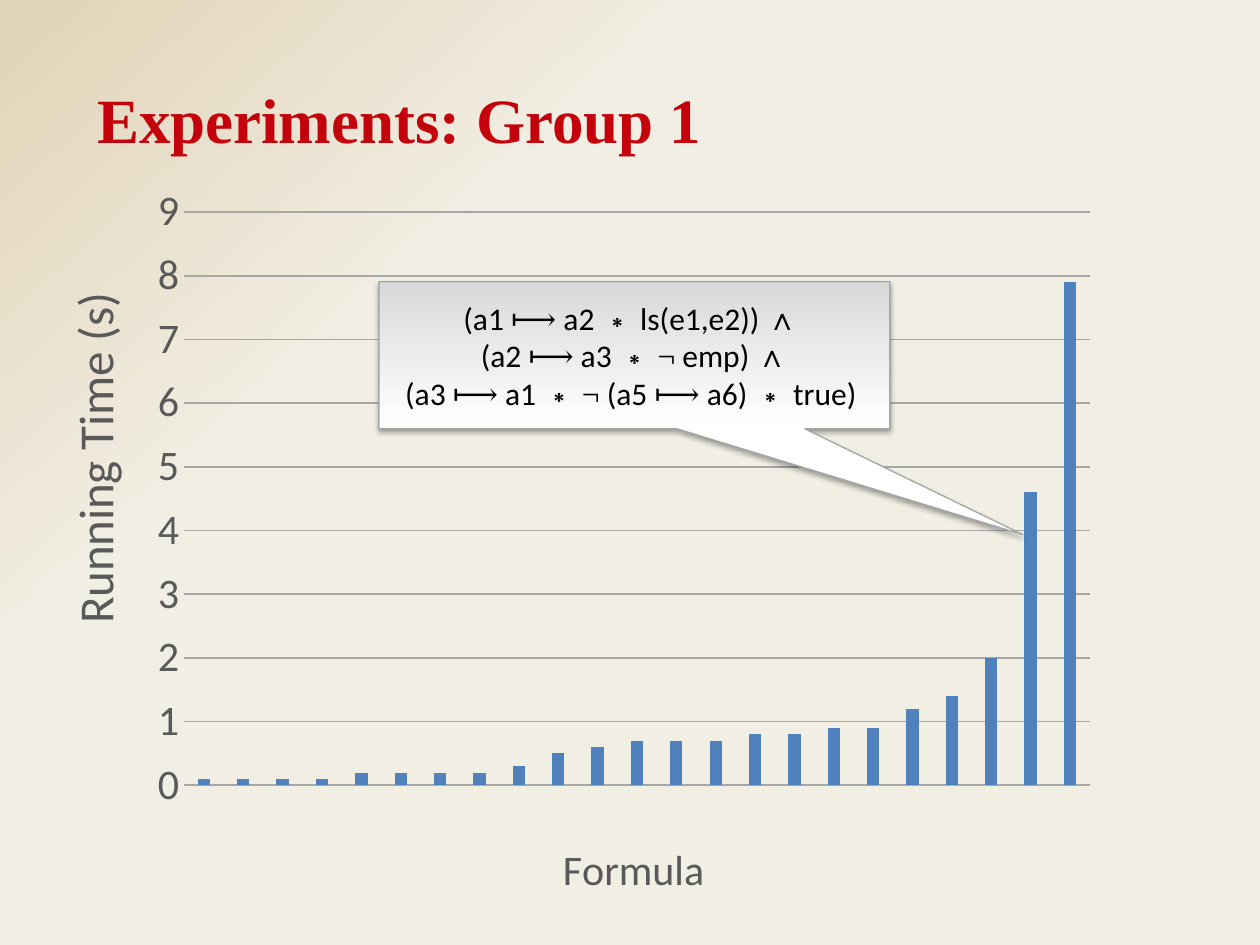
from itertools import groupby

from lxml import etree
from pptx import Presentation
from pptx.chart.data import CategoryChartData
from pptx.dml.color import RGBColor
from pptx.enum.chart import XL_CHART_TYPE, XL_TICK_MARK
from pptx.enum.shapes import MSO_SHAPE
from pptx.enum.text import MSO_ANCHOR, MSO_AUTO_SIZE, PP_ALIGN
from pptx.oxml.ns import qn
from pptx.util import Pt

COLUMNS = XL_CHART_TYPE.COLUMN_CLUSTERED
NO_TICKS = XL_TICK_MARK.NONE
CALLOUT = MSO_SHAPE.RECTANGULAR_CALLOUT
TOP, MIDDLE = MSO_ANCHOR.TOP, MSO_ANCHOR.MIDDLE
LEFT, CENTER = PP_ALIGN.LEFT, PP_ALIGN.CENTER
NO_FIT = MSO_AUTO_SIZE.NONE

TAN = RGBColor(0xE1, 0xD3, 0xB6)
CREAM = RGBColor(0xF1, 0xEE, 0xE4)
RED = RGBColor(0xC3, 0x02, 0x0B)
BLUE = RGBColor(0x4F, 0x81, 0xBD)
BLACK = RGBColor(0, 0, 0)
WHITE = RGBColor(0xFF, 0xFF, 0xFF)
DARK_GRAY = RGBColor(0x59, 0x59, 0x59)
MID_GRAY = RGBColor(0xA6, 0xA6, 0xA6)
LIGHT_GRAY = RGBColor(0xD9, 0xD9, 0xD9)

RUNNING_TIMES = [0.1, 0.1, 0.1, 0.1, 0.2, 0.2, 0.2, 0.2, 0.3, 0.5, 0.6, 0.7,
                 0.7, 0.7, 0.8, 0.8, 0.9, 0.9, 1.2, 1.4, 2, 4.6, 7.9]
FORMULA_LINES = ["(a1 ⟼ a2 ∗ ls(e1,e2)) ∧ ",
                 "(a2 ⟼ a3 ∗ ¬ emp) ∧",
                 "(a3 ⟼ a1 ∗ ¬ (a5 ⟼ a6) ∗ true) "]
SYMBOLS = "⟼∗∧¬"


def style_font(font, name, size, color, bold=False):
    font.name, font.size, font.bold = name, Pt(size), bold
    font.color.rgb = color


def fill_gradient(fill, angle, *stops):
    fill.gradient()
    fill.gradient_angle = angle
    for stop, (position, color) in zip(fill.gradient_stops, stops):
        stop.position, stop.color.rgb = position, color


def set_layout(parent, index, **fractions):
    """Place a chart part by fractions of the chart's size."""
    for old in parent.findall(qn("c:layout")):
        parent.remove(old)
    layout = etree.Element(qn("c:layout"))
    parent.insert(index, layout)
    manual = etree.SubElement(layout, qn("c:manualLayout"))
    if "w" in fractions:
        etree.SubElement(manual, qn("c:layoutTarget"), val="inner")
    for mode in ("xMode", "yMode"):
        etree.SubElement(manual, qn("c:" + mode), val="edge")
    for key, value in fractions.items():
        etree.SubElement(manual, qn("c:" + key), val=str(value))


class SlideBuilder:
    text_font = "Calibri"
    serif_font = "Times New Roman"

    def __init__(self, page):
        self.page = page

    def background(self):
        fill_gradient(self.page.background.fill, 313, (0, TAN), (0.32, CREAM))

    def title(self, text, left, top, width, height):
        box = self.page.shapes.title
        box.left, box.top, box.width, box.height = map(Pt, (left, top, width, height))
        frame = box.text_frame
        frame.auto_size, frame.vertical_anchor = NO_FIT, TOP
        frame.margin_left = frame.margin_right = frame.margin_bottom = 0
        frame.margin_top = Pt(3.6)
        frame.text = text
        para = frame.paragraphs[0]
        para.alignment = LEFT
        style_font(para.font, self.serif_font, 36, RED, bold=True)

    def axis_title(self, axis, text, size, x, y, rotation=0):
        title = axis.axis_title
        title.text_frame.text = text
        style_font(title.text_frame.paragraphs[0].font, self.text_font, size, DARK_GRAY)
        body = title._element.find(".//" + qn("a:bodyPr"))
        body.set("rot", str(rotation * 60000))
        body.set("vert", "horz")
        set_layout(title._element, 1, x=x, y=y)

    def column_chart(self, values, left, top, width, height):
        data = CategoryChartData()
        data.categories = [str(number) for number in range(1, len(values) + 1)]
        data.add_series("Series 1", values)
        chart = self.page.shapes.add_chart(
            COLUMNS, *map(Pt, (left, top, width, height)), data).chart
        chart.has_legend = chart.has_title = False
        style_font(chart.font, self.text_font, 10, BLACK)

        # Columns
        plot = chart.plots[0]
        plot.gap_width, plot.overlap, plot.vary_by_categories = 219, -27, False
        series_fill = plot.series[0].format.fill
        series_fill.solid()
        series_fill.fore_color.rgb = BLUE

        # Axes
        chart.category_axis.visible = False
        axis = chart.value_axis
        axis.minimum_scale, axis.maximum_scale, axis.major_unit = 0, 9, 1
        axis.major_tick_mark = axis.minor_tick_mark = NO_TICKS
        axis.format.line.fill.background()
        axis.tick_labels.number_format = "General"
        axis.tick_labels.number_format_is_linked = False
        style_font(axis.tick_labels.font, self.text_font, 24, DARK_GRAY)
        grid = axis.major_gridlines.format.line
        grid.width, grid.color.rgb = Pt(1), MID_GRAY

        self.axis_title(axis, "Running Time (s)", 28, 0.01, 0.15, rotation=-90)
        self.axis_title(chart.category_axis, "Formula", 24, 0.48, 0.88)
        plot_area = chart._chartSpace.find(".//" + qn("c:plotArea"))
        set_layout(plot_area, 0, x=0.133, y=0.054, w=0.847, h=0.762)

    def callout(self, lines, left, top, width, height, tip):
        box = self.page.shapes.add_shape(CALLOUT, *map(Pt, (left, top, width, height)))
        box.adjustments[0], box.adjustments[1] = tip
        fill_gradient(box.fill, 90, (0, WHITE), (1, LIGHT_GRAY))
        box.line.width, box.line.color.rgb = Pt(0.75), MID_GRAY
        self.soft_shadow(box)
        frame = box.text_frame
        frame.word_wrap, frame.vertical_anchor = True, MIDDLE
        para = frame.paragraphs[0]
        para.alignment = CENTER
        for index, line in enumerate(lines):
            if index:
                para.add_line_break()
            for is_symbol, letters in groupby(line, lambda letter: letter in SYMBOLS):
                span = para.add_run()
                span.text = "".join(letters)
                name = self.serif_font if is_symbol else self.text_font
                style_font(span.font, name, 18, BLACK)

    def soft_shadow(self, box):
        box.shadow.inherit = False
        effects = box._element.spPr.find(qn("a:effectLst"))
        shadow = etree.SubElement(
            effects, qn("a:outerShdw"), blurRad=str(Pt(3.1)), dist=str(Pt(1.8)),
            dir="5400000", rotWithShape="0")
        color = etree.SubElement(shadow, qn("a:srgbClr"), val="000000")
        etree.SubElement(color, qn("a:alpha"), val="35000")


def main():
    deck = Presentation()
    deck.slide_width, deck.slide_height = Pt(720), Pt(540)
    builder = SlideBuilder(deck.slides.add_slide(deck.slide_layouts[5]))
    builder.background()
    builder.title("Experiments: Group 1", 55.5, 42.5, 562, 67.5)
    builder.column_chart(RUNNING_TIMES, 24, 98, 611, 430)
    builder.callout(FORMULA_LINES, 216.5, 161, 292, 84, tip=(0.76, 1.22))
    deck.save("out.pptx")


if __name__ == "__main__":
    main()
